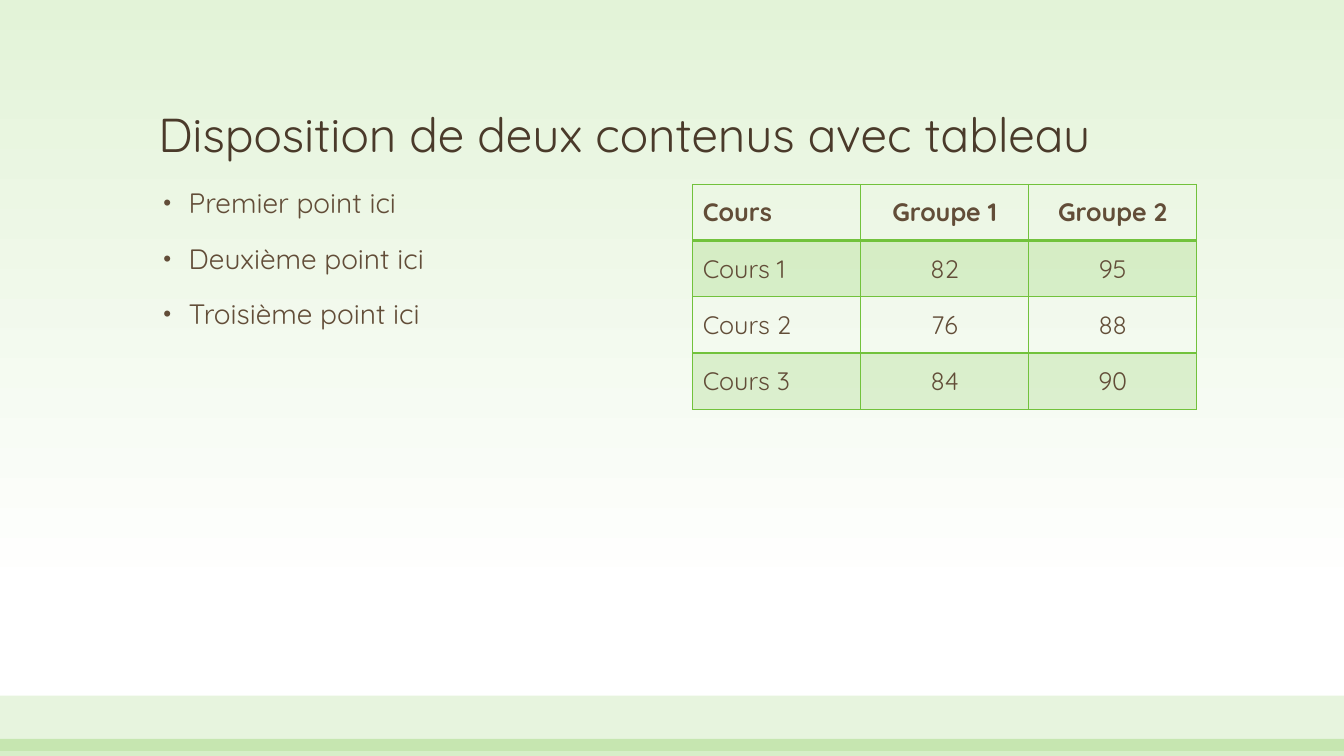
from dataclasses import dataclass

from lxml.etree import SubElement
from pptx import Presentation
from pptx.dml.color import RGBColor
from pptx.enum.shapes import MSO_SHAPE
from pptx.enum.text import MSO_ANCHOR, MSO_AUTO_SIZE, PP_ALIGN
from pptx.oxml.ns import qn
from pptx.util import Inches, Pt


@dataclass(frozen=True)
class Theme:
    font: str = "Quicksand"
    green: str = "72C23C"
    pale_green: str = "E3F3D8"
    white: str = "FFFFFF"
    title: str = "4A3A2A"
    text: str = "624D38"
    title_size: int = 34
    body_size: int = 20
    table_size: int = 18


THEME = Theme()


def write(paragraph, text, size, color=THEME.text, bold=False, align=PP_ALIGN.LEFT):
    run = paragraph.add_run()
    run.text = text
    run.font.name = THEME.font
    run.font.size = Pt(size)
    run.font.bold = bold
    run.font.color.rgb = RGBColor.from_string(color)
    paragraph.alignment = align


def fill_green(target, opacity):
    """Fill a shape or cell with the theme green at a percentage of opacity."""
    target.fill.solid()
    target.fill.fore_color.rgb = RGBColor.from_string(THEME.green)
    color = target.fill._xPr.find(qn("a:solidFill"))[0]
    SubElement(color, qn("a:alpha"), val=str(opacity * 1000))


presentation = Presentation()
presentation.slide_width = Inches(13.33)
presentation.slide_height = Inches(7.5)
slide = presentation.slides.add_slide(presentation.slide_layouts[1])

# Background, fading to white towards the bottom
background = slide.background.fill
background.gradient()
background.gradient_angle = 270
for stop, position, color in zip(
    background.gradient_stops, (0, 0.79), (THEME.pale_green, THEME.white)
):
    stop.position = position
    stop.color.rgb = RGBColor.from_string(color)

# Bands along the bottom
for top, height, opacity in ((6.9, 0.55, 17), (7.33, 0.17, 28)):
    band = slide.shapes.add_shape(
        MSO_SHAPE.RECTANGLE, 0, Inches(top), presentation.slide_width, Inches(height)
    )
    band.shadow.inherit = False
    band.line.fill.background()
    fill_green(band, opacity)

# Title and list
title, body = slide.placeholders
for placeholder, (left, top, width, height), anchor in (
    (title, (1.47, 0.48, 10.4, 1.19), MSO_ANCHOR.BOTTOM),
    (body, (1.47, 1.83, 5, 4.75), MSO_ANCHOR.TOP),
):
    placeholder.left, placeholder.top = Inches(left), Inches(top)
    placeholder.width, placeholder.height = Inches(width), Inches(height)
    placeholder.text_frame.vertical_anchor = anchor
    placeholder.text_frame.auto_size = MSO_AUTO_SIZE.NONE
    placeholder.text_frame.word_wrap = True

heading = title.text_frame.paragraphs[0]
heading.line_spacing = 0.9
write(heading, "Disposition de deux contenus avec tableau", THEME.title_size, THEME.title)

points = ("Premier point ici", "Deuxième point ici", "Troisième point ici")
for index, point in enumerate(points):
    frame = body.text_frame
    paragraph = frame.add_paragraph() if index else frame.paragraphs[0]
    write(paragraph, point, THEME.body_size)
    paragraph.line_spacing = 0.9
    paragraph.space_before = Pt(18)
    properties = paragraph._p.get_or_add_pPr()
    properties.set("marL", str(Inches(0.3)))
    properties.set("indent", str(Inches(-0.25)))
    SubElement(properties, qn("a:buSzPct"), val="80000")
    SubElement(properties, qn("a:buFont"), typeface="Arial")
    SubElement(properties, qn("a:buChar"), char="•")

# Table
rows = (
    ("Cours", "Groupe 1", "Groupe 2"),
    ("Cours 1", "82", "95"),
    ("Cours 2", "76", "88"),
    ("Cours 3", "84", "90"),
)
table = slide.shapes.add_table(
    len(rows), len(rows[0]), Inches(6.87), Inches(1.83), Inches(5), Inches(2.23)
).table
table.first_row = table.horz_banding = False
for row_index, row in enumerate(rows):
    for column_index, text in enumerate(row):
        cell = table.cell(row_index, column_index)
        cell.vertical_anchor = MSO_ANCHOR.MIDDLE
        write(
            cell.text_frame.paragraphs[0],
            text,
            THEME.table_size,
            bold=row_index == 0,
            align=PP_ALIGN.CENTER if column_index else PP_ALIGN.LEFT,
        )
        properties = cell._tc.get_or_add_tcPr()
        for side in ("L", "R", "T", "B"):
            under_header = (row_index, side) in ((0, "B"), (1, "T"))
            width = Pt(2 if under_header else 1)
            border = SubElement(properties, qn(f"a:ln{side}"), w=str(width))
            border_fill = SubElement(border, qn("a:solidFill"))
            SubElement(border_fill, qn("a:srgbClr"), val=THEME.green)
        if row_index % 2:
            fill_green(cell, 20)
        else:
            cell.fill.background()

presentation.save("out.pptx")
